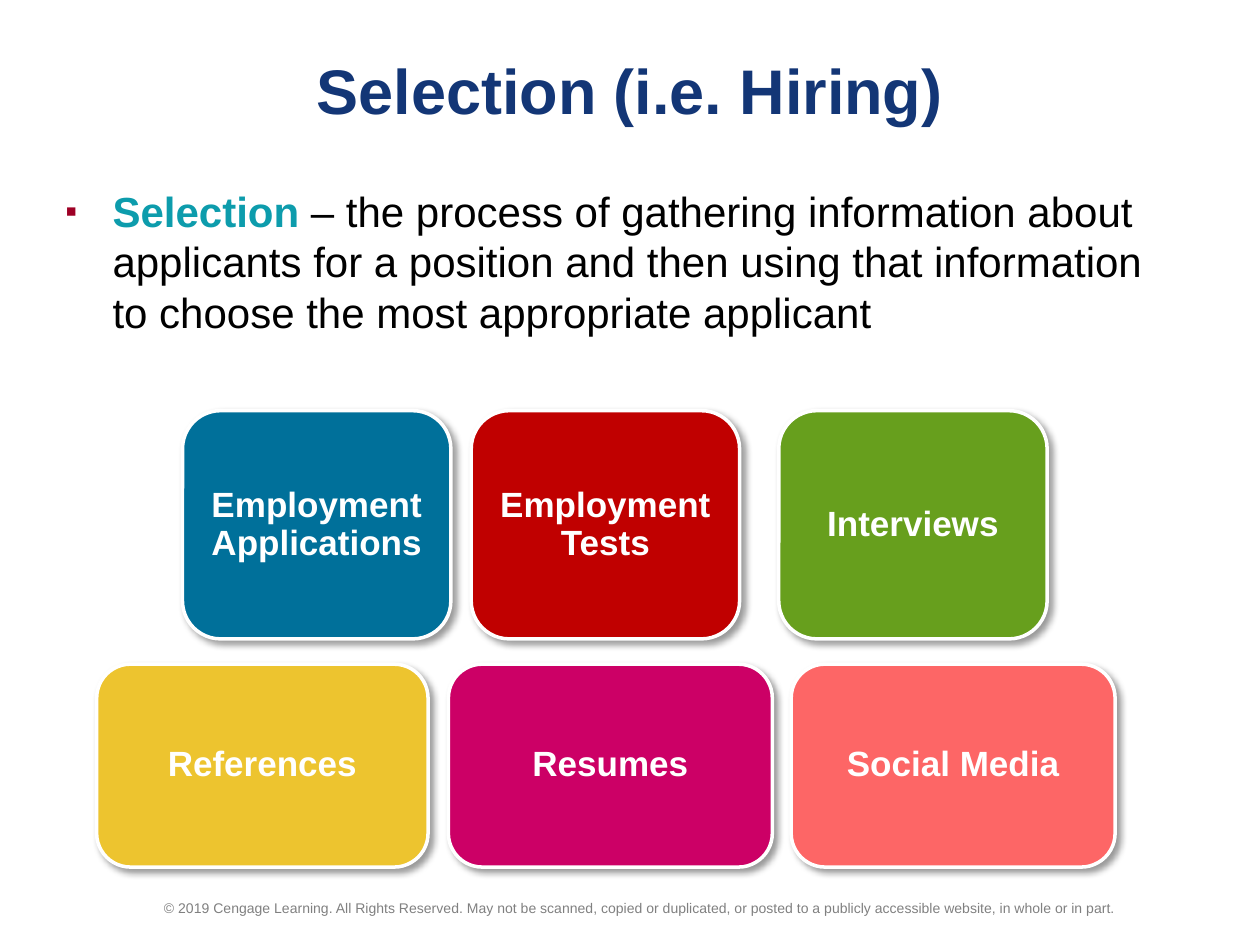
"""Build the slide on selection methods used in hiring."""
import pptx
import pptx.dml.color
import pptx.enum.shapes
import pptx.enum.text
import pptx.oxml
import pptx.oxml.ns
import pptx.util
from dataclasses import dataclass

Cm = pptx.util.Cm
Pt = pptx.util.Pt
RGB = pptx.dml.color.RGBColor.from_string
ALIGN = pptx.enum.text.PP_ALIGN
ANCHOR = pptx.enum.text.MSO_ANCHOR


@dataclass(frozen=True)
class Theme:
    font: str = "Arial"
    navy: str = "133676"
    teal: str = "0D9CAC"
    black: str = "000000"
    white: str = "FFFFFF"
    grey: str = "808080"
    bullet: str = "9E0025"
    title: int = 36
    body: int = 24
    card: int = 20
    footer: int = 8


theme = Theme()


def write(frame, text, *, size, color, bold=False, align=ALIGN.CENTER, anchor=ANCHOR.MIDDLE):
    frame.word_wrap = True
    frame.vertical_anchor = anchor
    paragraph = frame.paragraphs[0]
    paragraph.alignment = align
    run = paragraph.add_run()
    run.text = text
    run.font.name = theme.font
    run.font.size = Pt(size)
    run.font.bold = bold
    run.font.color.rgb = RGB(color)
    return paragraph


def xml(markup):
    return pptx.oxml.parse_xml(markup.replace(">", f" {pptx.oxml.ns.nsdecls('a')}>", 1))


deck = pptx.Presentation()
deck.slide_width, deck.slide_height = Cm(25.4), Cm(19.05)
slide = deck.slides.add_slide(deck.slide_layouts[6])

copyright_line = slide.shapes.add_textbox(Cm(1.9), Cm(17.98), Cm(22.02), Cm(0.64))
write(
    copyright_line.text_frame,
    "© 2019 Cengage Learning. All Rights Reserved. May not be scanned, copied or duplicated, "
    "or posted to a publicly accessible website, in whole or in part.",
    size=theme.footer, color=theme.grey,
)

heading = slide.shapes.add_textbox(Cm(1.27), Cm(0.43), Cm(22.86), Cm(2.74))
write(heading.text_frame, "Selection (i.e. Hiring)", size=theme.title, color=theme.navy, bold=True)

definition = slide.shapes.add_textbox(Cm(1.07), Cm(3.61), Cm(22.86), Cm(4))
meaning = dict(size=theme.body, align=ALIGN.LEFT, anchor=ANCHOR.TOP)
sentence = write(definition.text_frame, "Selection ", color=theme.teal, bold=True, **meaning)
write(
    definition.text_frame,
    "– the process of gathering information about applicants for a position and then using "
    "that information to choose the most appropriate applicant",
    color=theme.black, **meaning,
)
indent = sentence._p.get_or_add_pPr()
indent.set("marL", str(Cm(0.95)))
indent.set("indent", str(-Cm(0.95)))
for bullet_part in (
    f'<a:buClr><a:srgbClr val="{theme.bullet}"/></a:buClr>',
    '<a:buSzPct val="80000"></a:buSzPct>',
    f'<a:buFont typeface="{theme.font}"></a:buFont>',
    '<a:buChar char="▪"></a:buChar>',
):
    indent.append(xml(bullet_part))

method_rows = [
    (8.28, 4.6, [
        ("Employment Applications", "00709A", 3.68, 5.41),
        ("Employment Tests", "C00000", 9.5, 5.41),
        ("Interviews", "679F1D", 15.7, 5.41),
    ]),
    (13.39, 4.09, [
        ("References", "EDC42F", 1.95, 6.68),
        ("Resumes", "CC0066", 9.04, 6.53),
        ("Social Media", "FD6666", 15.95, 6.53),
    ]),
]
for top, height, methods in method_rows:
    for method, fill, left, width in methods:
        card = slide.shapes.add_shape(
            pptx.enum.shapes.MSO_SHAPE.ROUNDED_RECTANGLE, Cm(left), Cm(top), Cm(width), Cm(height)
        )
        card.fill.solid()
        card.fill.fore_color.rgb = RGB(fill)
        card.line.color.rgb = RGB(theme.white)
        card.line.width = Pt(2)
        card.shadow.inherit = False
        card._element.spPr.find(pptx.oxml.ns.qn("a:effectLst")).append(xml(
            f'<a:outerShdw blurRad="{Pt(4)}" dist="{Pt(3)}" dir="2700000" rotWithShape="0">'
            f'<a:srgbClr val="{theme.black}"><a:alpha val="40000"/></a:srgbClr></a:outerShdw>'
        ))
        label = card.text_frame
        label.margin_left = label.margin_right = label.margin_top = label.margin_bottom = Cm(0.2)
        caption = write(label, method, size=theme.card, color=theme.white, bold=True)
        caption.line_spacing = 0.9
        caption.space_after = Pt(7)

deck.save("out.pptx")
